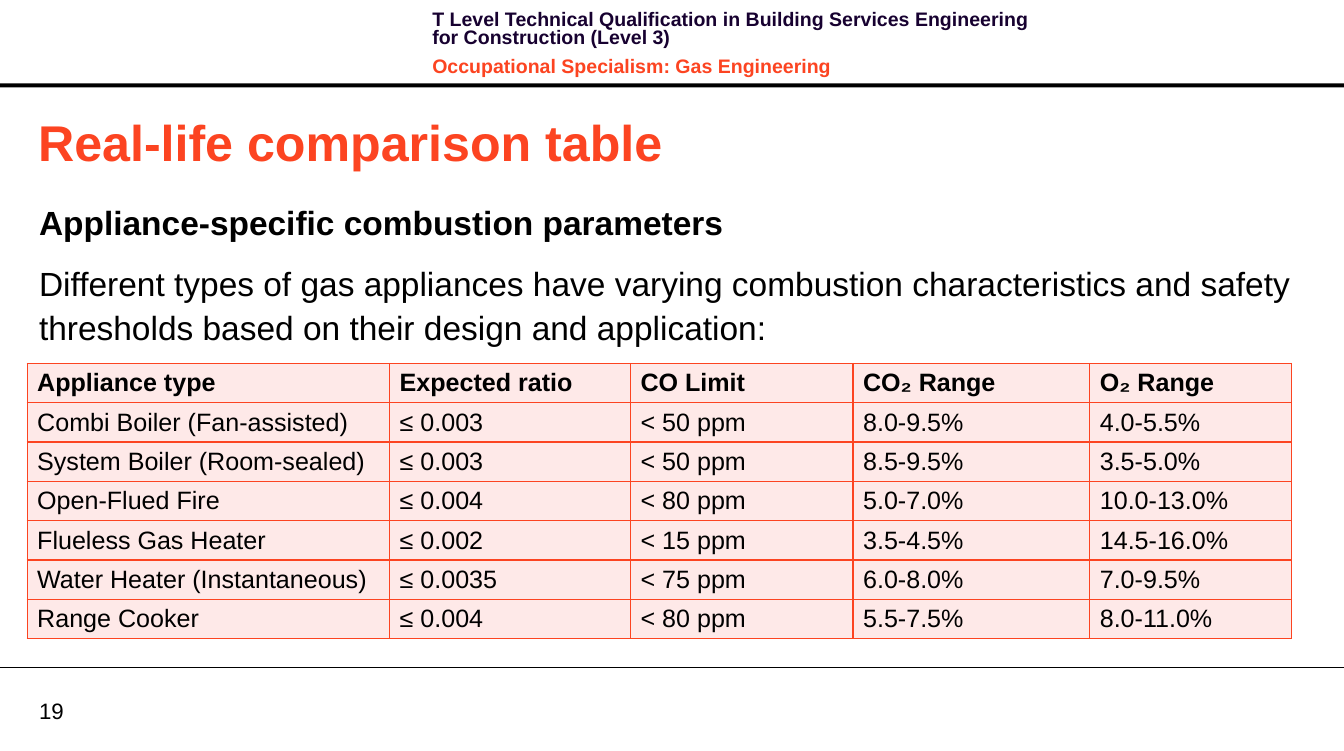
from pptx import Presentation
from pptx.dml.color import RGBColor
from pptx.enum.shapes import MSO_CONNECTOR, MSO_SHAPE
from pptx.enum.text import MSO_ANCHOR
from pptx.oxml.ns import qn
from pptx.util import Pt
from lxml.etree import SubElement

BLACK = RGBColor(0x00, 0x00, 0x00)
NAVY = RGBColor(0x17, 0x01, 0x30)
ORANGE = RGBColor(0xFC, 0x44, 0x21)
PINK = RGBColor(0xFE, 0xE9, 0xE8)
WIDE, HIGH = 964, 538.6

COLS = [260, 172.8, 159.6, 169.8, 144.8]
ROWS = [
    ["Appliance type", "Expected ratio", "CO Limit", "CO₂ Range", "O₂ Range"],
    ["Combi Boiler (Fan-assisted)", "≤ 0.003", "< 50 ppm", "8.0-9.5%", "4.0-5.5%"],
    ["System Boiler (Room-sealed)", "≤ 0.003", "< 50 ppm", "8.5-9.5%", "3.5-5.0%"],
    ["Open-Flued Fire", "≤ 0.004", "< 80 ppm", "5.0-7.0%", "10.0-13.0%"],
    ["Flueless Gas Heater", "≤ 0.002", "< 15 ppm", "3.5-4.5%", "14.5-16.0%"],
    ["Water Heater (Instantaneous)", "≤ 0.0035", "< 75 ppm", "6.0-8.0%", "7.0-9.5%"],
    ["Range Cooker", "≤ 0.004", "< 80 ppm", "5.5-7.5%", "8.0-11.0%"],
]
ROW_HIGH = 27.4


def set_font(para, size, color, bold=False):
    for run in para.runs:
        font = run.font
        font.name = "Arial"
        font.size = Pt(size)
        font.bold = bold
        font.color.rgb = color


def add_text(slide, box, paras, size, pad=(0, 0), anchor=MSO_ANCHOR.TOP,
             line=None, before=0, after=0):
    frame = slide.shapes.add_textbox(*map(Pt, box)).text_frame
    frame.word_wrap = True
    frame.vertical_anchor = anchor
    frame.margin_left = frame.margin_right = Pt(pad[0])
    frame.margin_top = frame.margin_bottom = Pt(pad[1])
    for i, (text, color, bold) in enumerate(paras):
        para = frame.add_paragraph() if i else frame.paragraphs[0]
        para.text = text
        para.space_before = Pt(before if i else 0)
        para.space_after = Pt(after)
        if line:
            para.line_spacing = line
        set_font(para, size, color, bold)


def add_bar(slide, top, high):
    bar = slide.shapes.add_shape(
        MSO_SHAPE.RECTANGLE, Pt(0), Pt(top), Pt(WIDE), Pt(high))
    bar.shadow.inherit = False
    bar.fill.solid()
    bar.fill.fore_color.rgb = BLACK
    bar.line.fill.background()


def add_rule(slide, top):
    rule = slide.shapes.add_connector(
        MSO_CONNECTOR.STRAIGHT, Pt(0), Pt(top), Pt(WIDE), Pt(top))
    rule.line.color.rgb = BLACK
    rule.line.width = Pt(0.75)
    SubElement(rule._element.spPr, qn("a:effectLst"))


def set_edges(cell):
    props = cell._tc.get_or_add_tcPr()
    for i, side in enumerate(("lnL", "lnR", "lnT", "lnB")):
        edge = props.makeelement(qn("a:" + side), {"w": str(Pt(1))})
        fill = SubElement(edge, qn("a:solidFill"))
        SubElement(fill, qn("a:srgbClr"), val=str(ORANGE))
        props.insert(i, edge)


def add_grid(slide, left, top):
    table = slide.shapes.add_table(
        len(ROWS), len(COLS), Pt(left), Pt(top),
        Pt(sum(COLS)), Pt(ROW_HIGH * len(ROWS))).table
    for col, wide in zip(table.columns, COLS):
        col.width = Pt(wide)
    for r, texts in enumerate(ROWS):
        table.rows[r].height = Pt(ROW_HIGH)
        for c, text in enumerate(texts):
            cell = table.cell(r, c)
            cell.text = text
            cell.vertical_anchor = MSO_ANCHOR.MIDDLE
            cell.margin_top = cell.margin_bottom = Pt(3.3)
            cell.fill.solid()
            cell.fill.fore_color.rgb = PINK
            set_edges(cell)
            set_font(cell.text_frame.paragraphs[0], 18, BLACK, r == 0)


def main():
    deck = Presentation()
    deck.slide_width, deck.slide_height = Pt(WIDE), Pt(HIGH)
    slide = deck.slides.add_slide(deck.slide_layouts[6])
    add_bar(slide, 59.8, 2.9)
    add_text(slide, (28, 499.7, 46, 19.4), [("19", BLACK, False)], 16,
             anchor=MSO_ANCHOR.MIDDLE)
    add_rule(slide, 478.8)
    add_text(slide, (303, 5, 458.6, 46), [
        ("T Level Technical Qualification in Building Services Engineering "
         "for Construction (Level 3)", NAVY, True),
        ("Occupational Specialism: Gas Engineering", ORANGE, True),
    ], 14, pad=(7.2, 3.6), line=Pt(13.1), before=4, after=4)
    add_text(slide, (20.2, 75.6, 915.8, 51),
             [("Real-life comparison table", ORANGE, True)], 36,
             pad=(7.2, 3.6), anchor=MSO_ANCHOR.MIDDLE)
    add_text(slide, (28, 141.8, 915.8, 326), [
        ("Appliance-specific combustion parameters", BLACK, True),
        ("Different types of gas appliances have varying combustion "
         "characteristics and safety thresholds based on their design and "
         "application:", BLACK, False),
    ], 24, line=1.1, after=12)
    add_grid(slide, 19.5, 260.6)
    deck.save("out.pptx")


if __name__ == "__main__":
    main()
